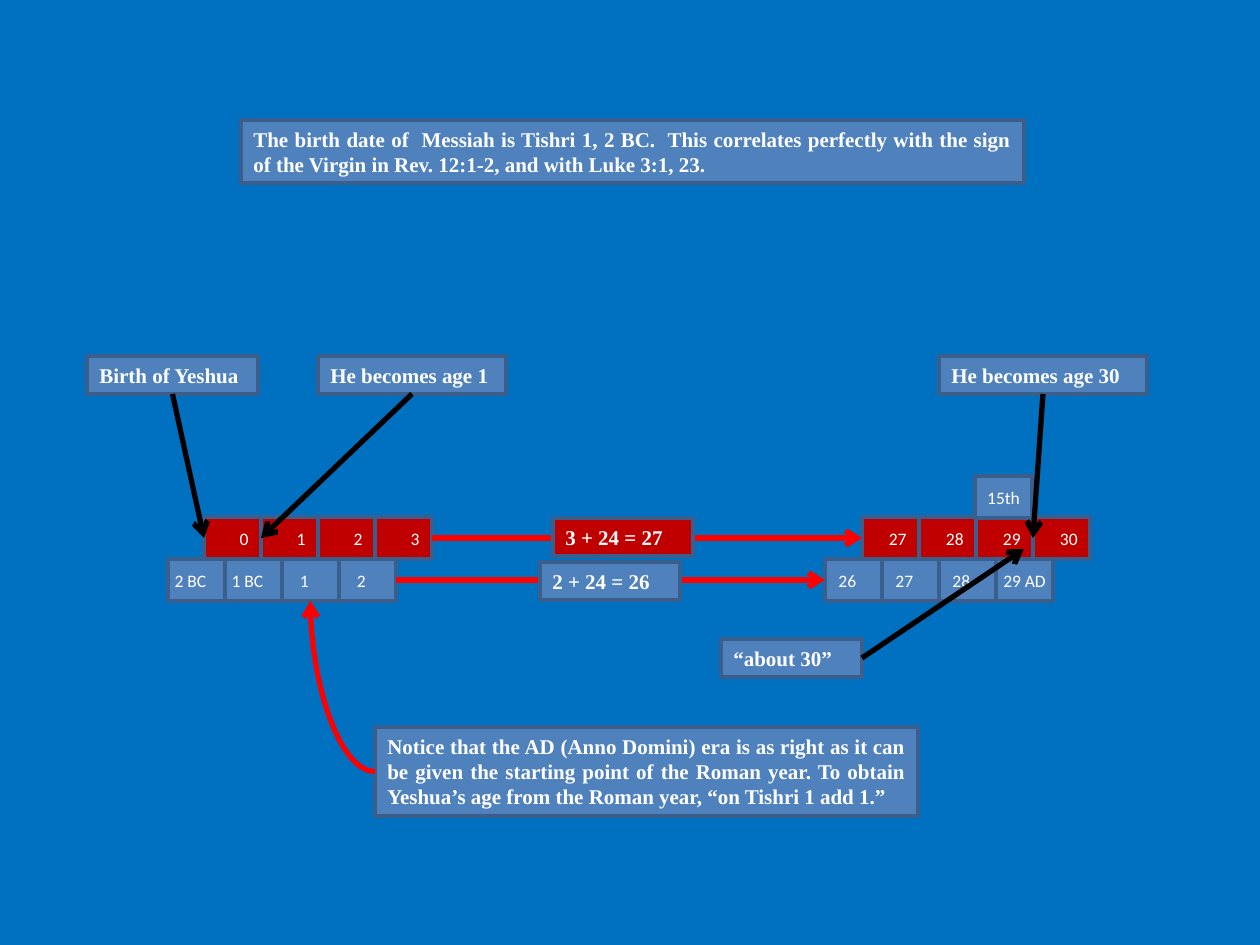
from lxml import etree
from pptx import Presentation
from pptx.dml.color import RGBColor
from pptx.enum.shapes import MSO_CONNECTOR as CONN, MSO_SHAPE as SHAPE
from pptx.enum.text import MSO_ANCHOR as ANCHOR, MSO_AUTO_SIZE as FIT, PP_ALIGN as ALIGN
from pptx.oxml.ns import qn
from pptx.util import Pt

PX = 914400 // 126
BLUE, DARK, CRIMSON = "4F81BD", "3A5F8C", "C00000"
RED, BLACK, WHITE, SKY = "FF0000", "000000", "FFFFFF", "0070C0"
TOP, LEFT, BOTTOM, RIGHT = range(4)
CELL_W, CELL_H = 57, 42
TOP_Y, AGE_Y, YEAR_Y = 476, 517, 559


def px(n):
    return int(n * PX)


def paint(color_format, value):
    color_format.rgb = RGBColor.from_string(value)


def add_box(slide, x, y, w, h, text, fill, align, font, size, bold=False):
    sp = slide.shapes.add_shape(SHAPE.RECTANGLE, px(x), px(y), px(w), px(h))
    sp.shadow.inherit = False
    sp.fill.solid()
    paint(sp.fill.fore_color, fill)
    paint(sp.line.color, DARK)
    sp.line.width = Pt(2)
    tf = sp.text_frame
    tf.text = text
    tf.word_wrap = True
    p = tf.paragraphs[0]
    p.alignment = align
    r = p.runs[0]
    r.font.name, r.font.size, r.font.bold = font, Pt(size), bold
    paint(r.font.color, WHITE)
    return sp


def add_label(slide, x, y, w, h, text, fill=BLUE):
    sp = add_box(slide, x, y, w, h, text, fill, ALIGN.JUSTIFY, "Times New Roman", 12, True)
    sp.text_frame.vertical_anchor = ANCHOR.TOP
    sp.text_frame.auto_size = FIT.SHAPE_TO_FIT_TEXT
    return sp


def add_cell(slide, x, y, text, fill=BLUE, align=ALIGN.CENTER):
    sp = add_box(slide, x, y, CELL_W, CELL_H, text, fill, align, "Calibri", 10)
    tf = sp.text_frame
    tf.vertical_anchor = ANCHOR.MIDDLE
    tf.margin_left = 0
    if text in ("29 AD", "15th"):
        tf.margin_right = 0
    return sp


def add_row(slide, x, y, texts, **style):
    return [add_cell(slide, x + i * CELL_W, y, text, **style) for i, text in enumerate(texts)]


def add_arrow(slide, start, start_side, color, end=None, end_side=LEFT, tip=(0, 0), kind=CONN.STRAIGHT):
    line = slide.shapes.add_connector(kind, 0, 0, px(tip[0]), px(tip[1]))
    line.begin_connect(start, start_side)
    if end is not None:
        line.end_connect(end, end_side)
    paint(line.line.color, color)
    line.line.width = Pt(3)
    props = line._element.spPr
    if kind == CONN.CURVE:
        props.find(qn("a:prstGeom")).set("prst", "curvedConnector2")
    etree.SubElement(props.find(qn("a:ln")), qn("a:tailEnd")).set("type", "arrow")
    etree.SubElement(props, qn("a:effectLst"))


def main():
    prs = Presentation()
    prs.slide_width, prs.slide_height = px(1260), px(945)
    slide = prs.slides.add_slide(prs.slide_layouts[6])
    slide.background.fill.solid()
    paint(slide.background.fill.fore_color, SKY)

    ages = {"fill": CRIMSON, "align": ALIGN.RIGHT}
    late_years = add_row(slide, 825, YEAR_Y, ["26", "27", "28", "29 AD"])
    late_ages = add_row(slide, 862, AGE_Y, ["27", "28", "29", "30"], **ages)
    early_years = add_row(slide, 168, YEAR_Y, ["2 BC", "1 BC", "1", "2"])
    early_ages = add_row(slide, 204, AGE_Y, ["0", "1", "2", "3"], **ages)
    add_cell(slide, 975, TOP_Y, "15th")

    add_arrow(slide, early_ages[-1], RIGHT, RED, late_ages[0])
    add_arrow(slide, early_years[-1], RIGHT, RED, late_years[0])
    add_label(slide, 553, 518, 140, 38, "3 + 24 = 27", CRIMSON)
    add_label(slide, 540, 562, 140, 38, "2 + 24 = 26")

    add_label(slide, 241, 120, 783, 63,
              "The birth date of  Messiah is Tishri 1, 2 BC.  This correlates perfectly "
              "with the sign of the Virgin in Rev. 12:1-2, and with Luke 3:1, 23.")
    events = [
        (87, 171, "Birth of Yeshua", early_ages[0]),
        (318, 188, "He becomes age 1", early_ages[1]),
        (939, 208, "He becomes age 30", late_ages[3]),
    ]
    for x, w, text, age in events:
        event = add_label(slide, x, 356, w, 38, text)
        add_arrow(slide, event, BOTTOM, BLACK, age)

    about = add_label(slide, 721, 639, 141, 38, "“about 30”")
    add_arrow(slide, about, RIGHT, BLACK, tip=(1024, 549))
    note = add_label(slide, 375, 727, 543, 89,
                     "Notice that the AD (Anno Domini) era is as right as it can be given the "
                     "starting point of the Roman year. To obtain Yeshua’s age from the Roman "
                     "year, “on Tishri 1 add 1.”")
    add_arrow(slide, note, LEFT, RED, early_years[2], BOTTOM, kind=CONN.CURVE)
    prs.save("out.pptx")


if __name__ == "__main__":
    main()
